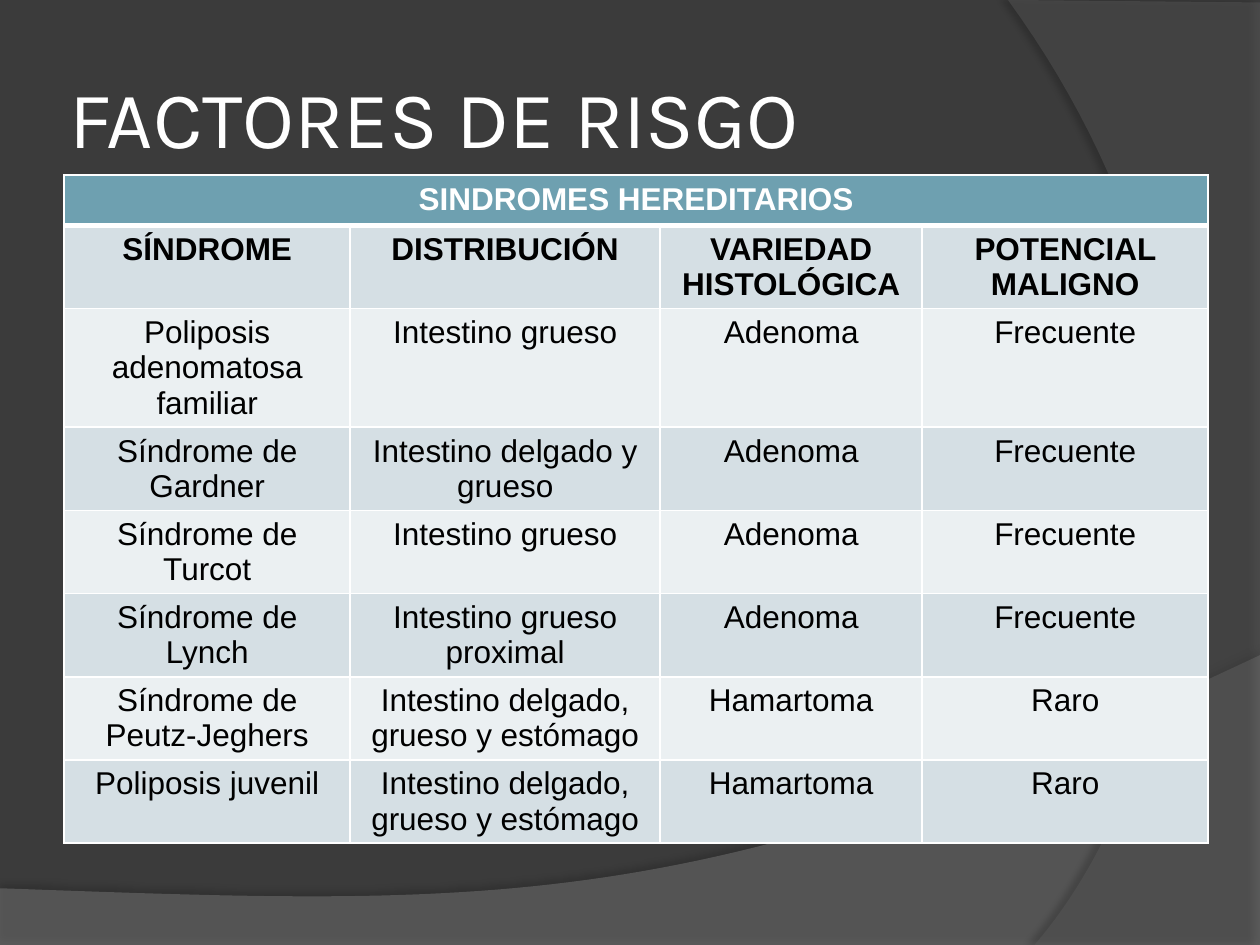
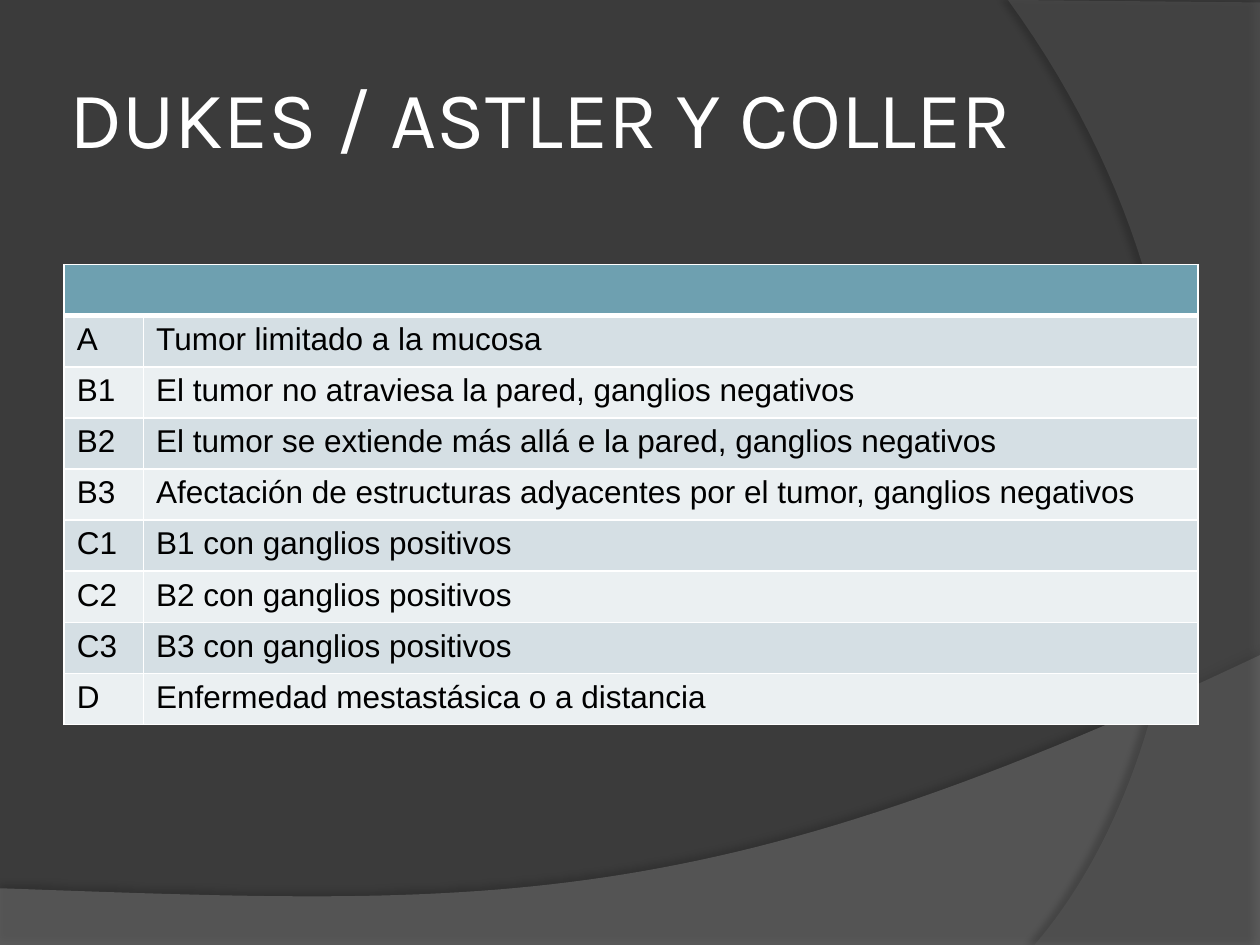
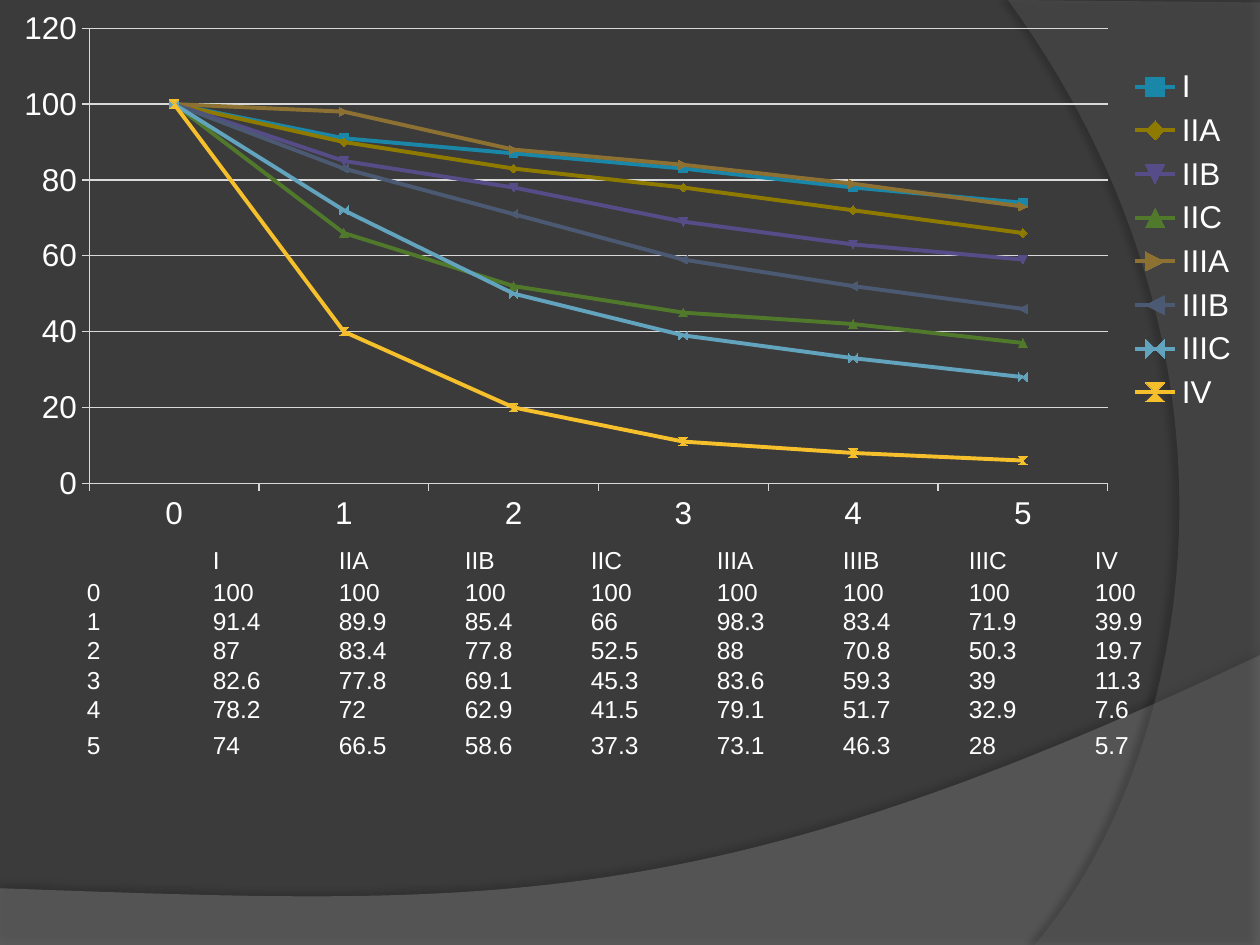
from lxml.etree import SubElement
from pptx import Presentation
from pptx.chart.data import CategoryChartData
from pptx.dml.color import RGBColor
from pptx.enum.chart import XL_CHART_TYPE, XL_LEGEND_POSITION
from pptx.enum.text import MSO_ANCHOR, PP_ALIGN
from pptx.oxml import parse_xml
from pptx.oxml.ns import nsdecls, qn
from pptx.util import Inches, Pt

TITLE_ONLY, BLANK = 5, 6
TITLE_FONT, BODY_FONT = "Karla", "Arial"
BACKGROUND, WHITE, BLACK, GRID = "3B3B3B", "FFFFFF", "000000", "D9D9D9"
HEADER_FILL, DARK_ROW, LIGHT_ROW = "6EA0B0", "D5DFE4", "EBF0F2"
TITLE_BOX = (0.5, 0.3, 8.17, 1.25)

SYNDROMES = [
    ["SINDROMES HEREDITARIOS", "", "", ""],
    ["SÍNDROME", "DISTRIBUCIÓN", "VARIEDAD HISTOLÓGICA", "POTENCIAL MALIGNO"],
    ["Poliposis adenomatosa familiar", "Intestino grueso", "Adenoma", "Frecuente"],
    ["Síndrome de Gardner", "Intestino delgado y grueso", "Adenoma", "Frecuente"],
    ["Síndrome de Turcot", "Intestino grueso", "Adenoma", "Frecuente"],
    ["Síndrome de Lynch", "Intestino grueso proximal", "Adenoma", "Frecuente"],
    ["Síndrome de Peutz-Jeghers", "Intestino delgado, grueso y estómago", "Hamartoma", "Raro"],
    ["Poliposis juvenil", "Intestino delgado, grueso y estómago", "Hamartoma", "Raro"],
]
STAGES = [
    ["", ""],
    ["A", "Tumor limitado a la mucosa"],
    ["B1", "El tumor no atraviesa la pared, ganglios negativos"],
    ["B2", "El tumor se extiende más allá e la pared, ganglios negativos"],
    ["B3", "Afectación de estructuras adyacentes por el tumor, ganglios negativos"],
    ["C1", "B1 con ganglios positivos"],
    ["C2", "B2 con ganglios positivos"],
    ["C3", "B3 con ganglios positivos"],
    ["D", "Enfermedad mestastásica o a distancia"],
]
YEARS = ["0", "1", "2", "3", "4", "5"]
# Stage: line colour, survival for each year
SURVIVAL = {
    "I": ("1B87A8", [100, 91.4, 87, 82.6, 78.2, 74]),
    "IIA": ("8F7A00", [100, 89.9, 83.4, 77.8, 72, 66.5]),
    "IIB": ("564C88", [100, 85.4, 77.8, 69.1, 62.9, 58.6]),
    "IIC": ("50792B", [100, 66, 52.5, 45.3, 41.5, 37.3]),
    "IIIA": ("8D7133", [100, 98.3, 88, 83.6, 79.1, 73.1]),
    "IIIB": ("4B5A72", [100, 83.4, 70.8, 59.3, 51.7, 46.3]),
    "IIIC": ("62A3BE", [100, 71.9, 50.3, 39, 32.9, 28]),
    "IV": ("F5C02C", [100, 39.9, 19.7, 11.3, 7.6, 5.7]),
}


def rgb(value):
    return RGBColor.from_string(value)


def paint(fill, color):
    fill.solid()
    fill.fore_color.rgb = rgb(color)


def set_font(font, size, color, name=BODY_FONT, bold=False):
    font.name, font.size, font.bold = name, Pt(size), bold
    font.color.rgb = rgb(color)


# Shared background
def bezier(start, control_a, control_b, end, steps=60):
    def at(t):
        weights = ((1 - t) ** 3, 3 * t * (1 - t) ** 2, 3 * t * t * (1 - t), t ** 3)
        corners = (start, control_a, control_b, end)
        return tuple(sum(w * c[axis] for w, c in zip(weights, corners)) for axis in (0, 1))
    return [at(step / steps) for step in range(steps + 1)]


def add_band(slide, outline, color, opacity, shadow_opacity, distance, direction):
    points = [(Inches(x), Inches(y)) for x, y in outline]
    builder = slide.shapes.build_freeform(*points[0])
    builder.add_line_segments(points[1:], close=True)
    band = builder.convert_to_shape()
    paint(band.fill, color)
    band.line.fill.background()
    band.shadow.inherit = False
    properties = band.element.spPr
    tint = properties.find(qn("a:solidFill"))[0]
    SubElement(tint, qn("a:alpha"), val=str(opacity * 1000))
    shadow = SubElement(properties.find(qn("a:effectLst")), qn("a:outerShdw"),
                        blurRad=str(Pt(4)), dist=str(Pt(distance)),
                        dir=str(direction * 60000), algn="ctr", rotWithShape="0")
    shade = SubElement(shadow, qn("a:srgbClr"), val=BLACK)
    SubElement(shade, qn("a:alpha"), val=str(shadow_opacity * 1000))
    return band


def dress_master(prs, slide):
    """Draw the two curved bands and move them behind everything on the master."""
    master = prs.slide_master
    paint(master.background.fill, BACKGROUND)
    lower = bezier((10, 5.2), (5.59, 7.29), (3.91, 7.19), (0, 7.05)) + [(0, 7.5), (10, 7.5)]
    right = bezier((8.21, 7.5), (9.35, 6.19), (10.18, 3), (8, 0)) + [(10, 0.02), (10, 7.5)]
    bands = [add_band(slide, lower, "7F7F7F", 45, 35, 3.5, 270),
             add_band(slide, right, "5E5E5E", 40, 45, 4, 180)]
    for position, band in enumerate(bands):
        band.element.nvSpPr.cNvPr.set("id", str(100 + position))
        master.shapes.element.insert(2 + position, band.element)


# Titles and tables
def set_title(slide, text, box):
    title = slide.shapes.title
    title.left, title.top, title.width, title.height = map(Inches, box)
    frame = title.text_frame
    frame.text = text
    frame.vertical_anchor = MSO_ANCHOR.MIDDLE
    frame.margin_left = frame.margin_right = Inches(0.05)
    heading = frame.paragraphs[0]
    heading.alignment = PP_ALIGN.LEFT
    set_font(heading.font, 46, WHITE, TITLE_FONT)


def set_borders(cell, bottom_width):
    properties = cell._tc.get_or_add_tcPr()
    widths = {"lnL": 1, "lnR": 1, "lnT": 1, "lnB": bottom_width}
    for position, (side, width) in enumerate(widths.items()):
        properties.insert(position, parse_xml(
            f'<a:{side} {nsdecls("a")} w="{Pt(width)}"><a:solidFill>'
            f'<a:srgbClr val="{WHITE}"/></a:solidFill></a:{side}>'))


def add_banded_table(slide, rows, left, top, widths, heights, align, bold_rows):
    table = slide.shapes.add_table(
        len(rows), len(widths), Inches(left), Inches(top),
        Inches(sum(widths)), Inches(sum(heights))).table
    for column, width in zip(table.columns, widths):
        column.width = Inches(width)
    for row, height in zip(table.rows, heights):
        row.height = Inches(height)
    table.cell(0, 0).merge(table.cell(0, len(widths) - 1))
    for r, texts in enumerate(rows):
        header = r == 0
        fill = HEADER_FILL if header else (LIGHT_ROW, DARK_ROW)[r % 2]
        for c, text in enumerate(texts):
            cell = table.cell(r, c)
            paint(cell.fill, fill)
            set_borders(cell, 3 if header else 1)
            if text:
                cell.text = text
            entry = cell.text_frame.paragraphs[0]
            entry.alignment = align
            set_font(entry.font, 18, WHITE if header else BLACK, bold=r < bold_rows)


# Survival chart and its figures
def place_in_chart(parent, index, x, y, w, h, inner=False):
    for old in parent.findall(qn("c:layout")):
        parent.remove(old)
    target = '<c:layoutTarget val="inner"/>' if inner else ""
    parent.insert(index, parse_xml(
        f'<c:layout {nsdecls("c")}><c:manualLayout>{target}'
        f'<c:xMode val="edge"/><c:yMode val="edge"/><c:x val="{x}"/><c:y val="{y}"/>'
        f'<c:w val="{w}"/><c:h val="{h}"/></c:manualLayout></c:layout>'))


def add_survival_chart(slide, box):
    data = CategoryChartData()
    data.categories = YEARS
    for stage, (_, rates) in SURVIVAL.items():
        data.add_series(stage, [round(rate) for rate in rates])
    chart = slide.shapes.add_chart(XL_CHART_TYPE.LINE_MARKERS, *map(Inches, box), data).chart
    set_font(chart.font, 18, WHITE)
    chart.has_title = False
    chart.has_legend = True
    chart.legend.position = XL_LEGEND_POSITION.RIGHT
    chart.legend.include_in_layout = False
    rates_axis = chart.value_axis
    rates_axis.minimum_scale, rates_axis.maximum_scale, rates_axis.major_unit = 0, 120, 20
    for line in (rates_axis.major_gridlines.format.line, rates_axis.format.line,
                 chart.category_axis.format.line):
        line.color.rgb = rgb(GRID)
        line.width = Pt(0.75)
    plot = chart.plots[0]
    plot.vary_by_categories = False
    for series, (color, _) in zip(plot.series, SURVIVAL.values()):
        series.smooth = False
        series.format.line.color.rgb = rgb(color)
        series.format.line.width = Pt(2.25)
        paint(series.marker.format.fill, color)
        series.marker.format.line.color.rgb = rgb(color)
    plot_area = chart.element.find(".//" + qn("c:plotArea"))
    place_in_chart(plot_area, 0, 0.07, 0.05, 0.81, 0.84, inner=True)
    place_in_chart(chart.element.find(".//" + qn("c:legend")), 1, 0.89, 0.11, 0.1, 0.66)


def set_tab_stops(paragraph, count, gap):
    stops = SubElement(paragraph._p.get_or_add_pPr(), qn("a:tabLst"))
    for number in range(1, count + 1):
        SubElement(stops, qn("a:tab"), pos=str(Inches(number * gap)), algn="l")


def add_survival_figures(slide, box):
    frame = slide.shapes.add_textbox(*map(Inches, box)).text_frame
    frame.word_wrap = True
    lines = [["", *SURVIVAL]]
    for position, year in enumerate(YEARS):
        lines.append([year, *(f"{rates[position]:g}" for _, rates in SURVIVAL.values())])
    frame.text = "\n".join("\t".join(line) for line in lines)
    for line in frame.paragraphs:
        set_font(line.font, 14, WHITE)
    frame.paragraphs[1].space_before = Pt(1)
    frame.paragraphs[-1].space_before = Pt(3.5)
    for line in frame.paragraphs:
        # Tab stops stand before the default run properties
        set_tab_stops(line, len(SURVIVAL), gap=1)
        properties = line._p.pPr
        defaults = properties.find(qn("a:defRPr"))
        if defaults is not None:
            properties.append(defaults)


def main():
    prs = Presentation()
    prs.slide_width, prs.slide_height = Inches(10), Inches(7.5)
    layouts = prs.slide_layouts

    # Hereditary syndromes
    risks = prs.slides.add_slide(layouts[TITLE_ONLY])
    dress_master(prs, risks)
    set_title(risks, "FACTORES DE RISGO", TITLE_BOX)
    add_banded_table(risks, SYNDROMES, 0.51, 1.39, [2.27, 2.46, 2.08, 2.27],
                     [0.4, 0.66, 0.94] + [0.66] * 5, PP_ALIGN.CENTER, bold_rows=2)

    # Staging
    staging = prs.slides.add_slide(layouts[TITLE_ONLY])
    set_title(staging, "DUKES / ASTLER Y COLLER", TITLE_BOX)
    add_banded_table(staging, STAGES, 0.51, 2.1, [0.63, 8.37],
                     [3.65 / len(STAGES)] * len(STAGES), PP_ALIGN.LEFT, bold_rows=1)

    # Survival by stage
    survival = prs.slides.add_slide(layouts[BLANK])
    add_survival_chart(survival, (0.01, 0.01, 9.98, 4.3))
    add_survival_figures(survival, (0.59, 4.28, 8.82, 1.9))

    prs.save("out.pptx")


if __name__ == "__main__":
    main()
